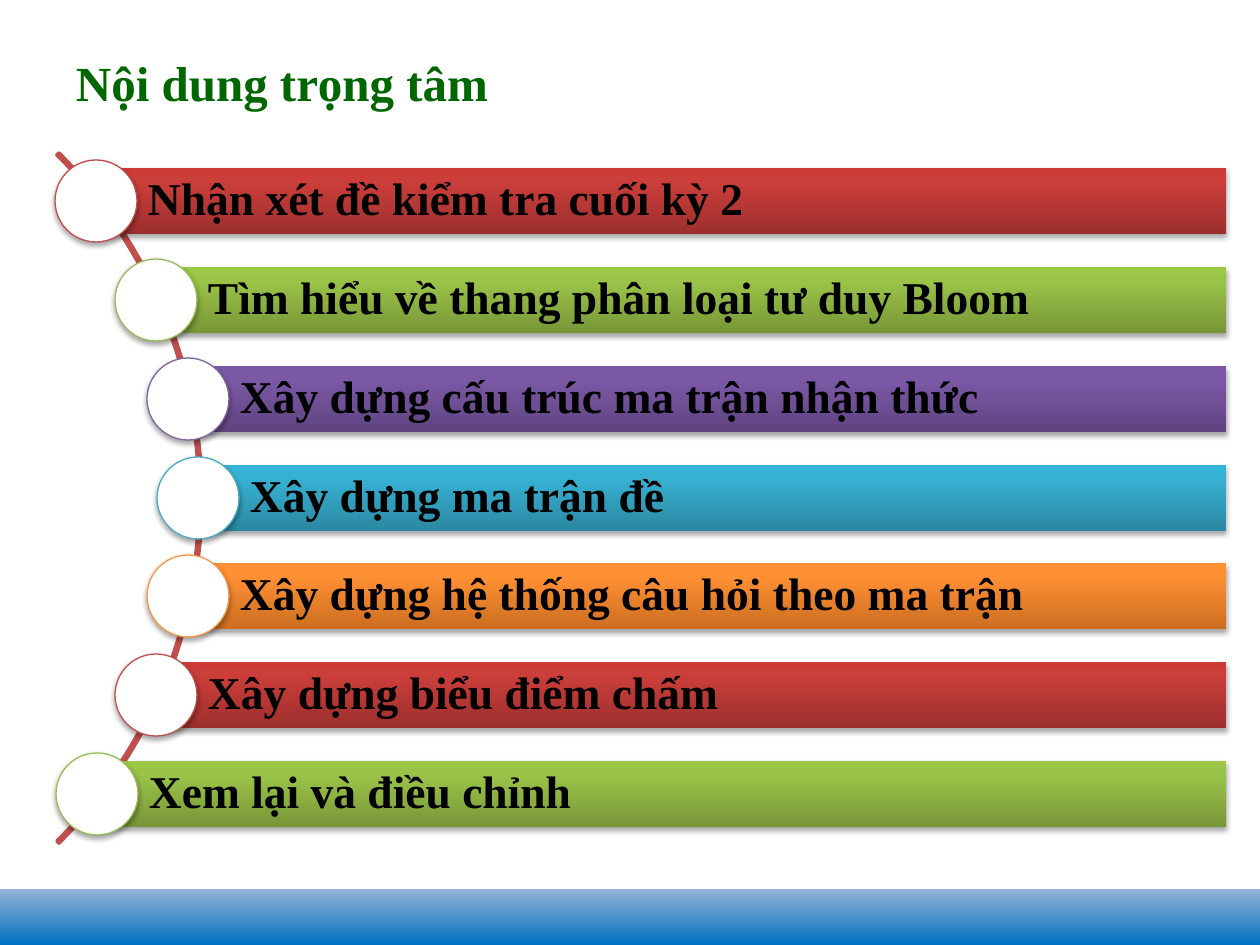
from copy import deepcopy
from dataclasses import dataclass
from math import sqrt

from lxml.etree import SubElement
from pptx import Presentation
from pptx.dml.color import RGBColor
from pptx.enum.shapes import MSO_SHAPE as Preset
from pptx.enum.text import MSO_ANCHOR as Anchor, PP_ALIGN as Align
from pptx.oxml.ns import qn
from pptx.shapes.autoshape import Shape
from pptx.slide import Slide
from pptx.util import Emu, Pt

PX = 914400 // 126
FONT = "Times New Roman"
BLACK = RGBColor(0x00, 0x00, 0x00)
WHITE = RGBColor(0xFF, 0xFF, 0xFF)
TITLE_GREEN = RGBColor(0x00, 0x66, 0x00)
BAND_DARK = RGBColor(0x00, 0x70, 0xC0)
BAND_LIGHT = RGBColor(0x95, 0xB3, 0xD7)

FIRST_Y, LAST_Y = 201, 794
ARC_X, ARC_Y, ARC_RADIUS = -286, 498, 488
TRACK_RADIUS = 484
BAR_RIGHT, BAR_HEIGHT, CIRCLE_SIZE = 1226, 66, 82


@dataclass(frozen=True)
class Theme:
    """The outline of a circle and the gradient of its bar, bottom to top."""

    outline: RGBColor
    dark: RGBColor
    middle: RGBColor
    light: RGBColor


@dataclass(frozen=True)
class Topic:
    """One line of the agenda."""

    text: str
    theme: Theme


def make_theme(*codes: str) -> Theme:
    """Build a theme from four hexadecimal colours."""
    return Theme(*map(RGBColor.from_string, codes))


RED = make_theme("C0504D", "9C2F2D", "CB3E3A", "CE3B37")
GREEN = make_theme("9BBB59", "779737", "9BC348", "9DC746")
PURPLE = make_theme("8064A2", "5F4480", "7B58A6", "7C57A8")
TEAL = make_theme("4BACC6", "2A88A2", "37B1D2", "34B4D6")
ORANGE = make_theme("F79646", "CC6E20", "FF9034", "FF9136")

TOPICS = (
    Topic("Nhận xét đề kiểm tra cuối kỳ 2", RED),
    Topic("Tìm hiểu về thang phân loại tư duy Bloom", GREEN),
    Topic("Xây dựng cấu trúc ma trận nhận thức", PURPLE),
    Topic("Xây dựng ma trận đề", TEAL),
    Topic("Xây dựng hệ thống câu hỏi theo ma trận", ORANGE),
    Topic("Xây dựng biểu điểm chấm", RED),
    Topic("Xem lại và điều chỉnh", GREEN),
)


def px(length: int) -> Emu:
    """Turn pixels into EMU."""
    return Emu(length * PX)


def write_text(shape: Shape, text: str, *, size: int, color: RGBColor,
               left: int = 13, line_spacing: float = 1.0) -> None:
    """Write one bold, left-aligned paragraph in the middle of a shape."""
    frame = shape.text_frame
    frame.word_wrap = True
    frame.vertical_anchor = Anchor.MIDDLE
    frame.margin_left = px(left)
    frame.margin_right = frame.margin_top = frame.margin_bottom = px(8)
    paragraph = frame.paragraphs[0]
    paragraph.alignment = Align.LEFT
    paragraph.line_spacing = line_spacing
    run = paragraph.add_run()
    run.text = text
    run.font.name = FONT
    run.font.size = Pt(size)
    run.font.bold = True
    run.font.color.rgb = color


def add_shape(slide: Slide, preset: Preset, left: int, top: int,
              width: int, height: int) -> Shape:
    """Add a preset shape with no line, fill or shadow."""
    shape = slide.shapes.add_shape(preset, px(left), px(top), px(width), px(height))
    shape.shadow.inherit = False
    shape.fill.background()
    shape.line.fill.background()
    return shape


def fill_gradient(shape: Shape, stops: dict[float, RGBColor]) -> None:
    """Fill a shape with a gradient that runs from bottom to top."""
    shape.fill.gradient()
    shape.fill.gradient_angle = 90
    stop_list = shape._element.spPr.find(qn("a:gradFill")).find(qn("a:gsLst"))
    while len(stop_list) < len(stops):
        stop_list.append(deepcopy(stop_list[-1]))
    for stop, (position, color) in zip(shape.fill.gradient_stops, stops.items()):
        stop.position = position
        stop.color.rgb = color


def add_shadow(shape: Shape) -> None:
    """Give a shape a soft shadow below it."""
    effects = shape._element.spPr.find(qn("a:effectLst"))
    shadow = SubElement(effects, qn("a:outerShdw"), blurRad="40000", dist="23000",
                        dir="5400000", rotWithShape="0")
    color = SubElement(shadow, qn("a:srgbClr"), val="000000")
    SubElement(color, qn("a:alpha"), val="35000")


def set_line(shape: Shape, color: RGBColor, width: float) -> None:
    """Outline a shape."""
    shape.line.color.rgb = color
    shape.line.width = Pt(width)


def draw_arc(slide: Slide) -> None:
    """Draw the thin arc behind the circles."""
    arc = add_shape(slide, Preset.BLOCK_ARC, ARC_X - ARC_RADIUS, ARC_Y - ARC_RADIUS,
                    2 * ARC_RADIUS, 2 * ARC_RADIUS)
    for index, value in enumerate((189, 27, 0.003)):
        arc.adjustments[index] = value
    set_line(arc, RED.outline, 2)


def draw_topic(slide: Slide, topic: Topic, center_y: int) -> None:
    """Draw a bar with its text and the circle at its left end."""
    center_x = round(ARC_X + sqrt(TRACK_RADIUS**2 - (center_y - ARC_Y) ** 2))
    theme = topic.theme
    bar = add_shape(slide, Preset.RECTANGLE, center_x, center_y - BAR_HEIGHT // 2,
                    BAR_RIGHT - center_x, BAR_HEIGHT)
    fill_gradient(bar, {0: theme.dark, 0.8: theme.middle, 1: theme.light})
    add_shadow(bar)
    write_text(bar, topic.text, size=26, color=BLACK, left=52, line_spacing=0.9)

    radius = CIRCLE_SIZE // 2
    circle = add_shape(slide, Preset.OVAL, center_x - radius, center_y - radius,
                       CIRCLE_SIZE, CIRCLE_SIZE)
    circle.fill.solid()
    circle.fill.fore_color.rgb = WHITE
    set_line(circle, theme.outline, 0.75)
    add_shadow(circle)


def main() -> None:
    """Build the agenda slide."""
    presentation = Presentation()
    presentation.slide_width, presentation.slide_height = px(1260), px(945)
    slide = presentation.slides.add_slide(presentation.slide_layouts[5])

    band = add_shape(slide, Preset.RECTANGLE, 0, 889, 1260, 56)
    fill_gradient(band, {0: BAND_DARK, 1: BAND_LIGHT})

    title = slide.shapes.title
    title.left, title.top, title.width, title.height = map(px, (63, 38, 1162, 87))
    write_text(title, "Nội dung trọng tâm", size=28, color=TITLE_GREEN)

    draw_arc(slide)
    pitch = (LAST_Y - FIRST_Y) / (len(TOPICS) - 1)
    for index, topic in enumerate(TOPICS):
        draw_topic(slide, topic, round(FIRST_Y + index * pitch))
    presentation.save("out.pptx")


if __name__ == "__main__":
    main()
